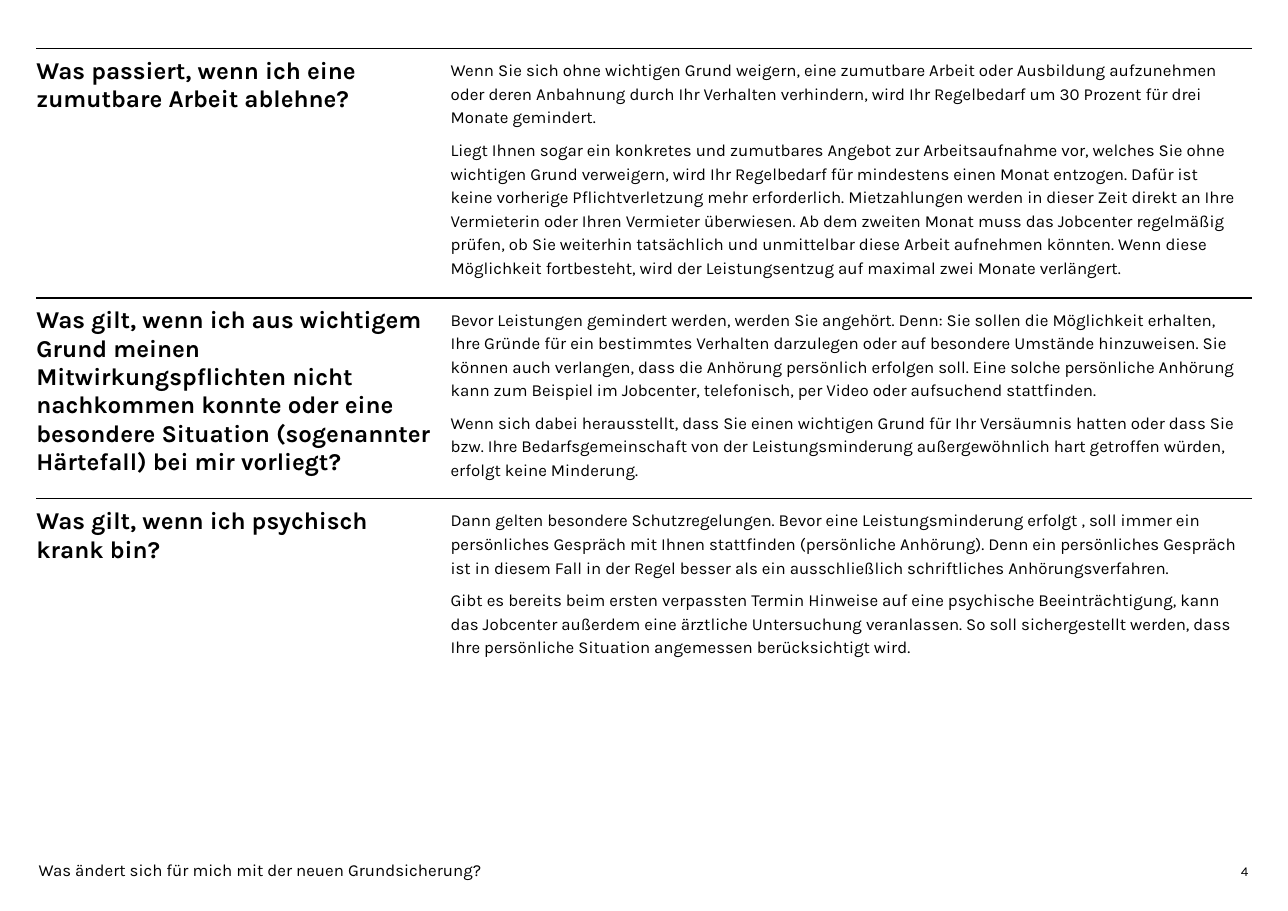
import pptx
import pptx.dml.color
import pptx.enum.text
import pptx.oxml
import pptx.oxml.ns
import pptx.util

Inches = pptx.util.Inches
Pt = pptx.util.Pt
ALIGN = pptx.enum.text.PP_ALIGN
BLACK = pptx.dml.color.RGBColor(0, 0, 0)

LEFT = dict(align=ALIGN.LEFT, size=11, bold=False)
RIGHT = dict(align=ALIGN.RIGHT, size=8.8, bold=False)
HEAD = dict(align=ALIGN.LEFT, size=15.8, bold=True)
BODY = dict(LEFT, line=1.2, after=6)

COLS = [3.76, 7.27]
ROWS = [
    (2.21, "Was passiert, wenn ich eine zumutbare Arbeit ablehne?", [
        "Wenn Sie sich ohne wichtigen Grund weigern, eine zumutbare Arbeit oder Ausbildung "
        "aufzunehmen oder deren Anbahnung durch Ihr Verhalten verhindern, wird Ihr Regelbedarf "
        "um 30 Prozent für drei Monate gemindert.",
        "Liegt Ihnen sogar ein konkretes und zumutbares Angebot zur Arbeitsaufnahme vor, welches "
        "Sie ohne wichtigen Grund verweigern, wird Ihr Regelbedarf für mindestens einen Monat "
        "entzogen. Dafür ist keine vorherige Pflichtverletzung mehr erforderlich. Mietzahlungen "
        "werden in dieser Zeit direkt an Ihre Vermieterin oder Ihren Vermieter überwiesen. Ab dem "
        "zweiten Monat muss das Jobcenter regelmäßig prüfen, ob Sie weiterhin tatsächlich und "
        "unmittelbar diese Arbeit aufnehmen könnten. Wenn diese Möglichkeit fortbesteht, wird der "
        "Leistungsentzug auf maximal zwei Monate verlängert.",
    ]),
    (1.77, "Was gilt, wenn ich aus wichtigem Grund meinen Mitwirkungspflichten nicht nachkommen "
     "konnte oder eine besondere Situation (sogenannter Härtefall) bei mir vorliegt?", [
        "Bevor Leistungen gemindert werden, werden Sie angehört. Denn: Sie sollen die Möglichkeit "
        "erhalten, Ihre Gründe für ein bestimmtes Verhalten darzulegen oder auf besondere Umstände "
        "hinzuweisen. Sie können auch verlangen, dass die Anhörung persönlich erfolgen soll. Eine "
        "solche persönliche Anhörung kann zum Beispiel im Jobcenter, telefonisch, per Video oder "
        "aufsuchend stattfinden.",
        "Wenn sich dabei herausstellt, dass Sie einen wichtigen Grund für Ihr Versäumnis hatten "
        "oder dass Sie bzw. Ihre Bedarfsgemeinschaft von der Leistungsminderung außergewöhnlich "
        "hart getroffen würden, erfolgt keine Minderung.",
    ]),
    (1.66, "Was gilt, wenn ich psychisch krank bin?", [
        "Dann gelten besondere Schutzregelungen. Bevor eine Leistungsminderung erfolgt , soll immer "
        "ein persönliches Gespräch mit Ihnen stattfinden (persönliche Anhörung). Denn ein "
        "persönliches Gespräch ist in diesem Fall in der Regel besser als ein ausschließlich "
        "schriftliches Anhörungsverfahren.",
        "Gibt es bereits beim ersten verpassten Termin Hinweise auf eine psychische "
        "Beeinträchtigung, kann das Jobcenter außerdem eine ärztliche Untersuchung veranlassen. So "
        "soll sichergestellt werden, dass Ihre persönliche Situation angemessen berücksichtigt wird.",
    ]),
]


class Page:
    def __init__(self, slide, font, color):
        self.slide = slide
        self.font = font
        self.color = color

    def fill(self, frame, texts, look):
        """Fill a text frame with one paragraph per text."""
        frame.word_wrap = True
        for i, text in enumerate(texts):
            para = frame.paragraphs[0] if i == 0 else frame.add_paragraph()
            run = para.add_run()
            run.text = text
            form = dict(alignment=look["align"], line_spacing=look.get("line", 1.0),
                        space_before=Pt(0), space_after=Pt(look.get("after", 0)))
            for name, value in form.items():
                setattr(para, name, value)
            form = dict(name=self.font, size=Pt(look["size"]), bold=look["bold"])
            for name, value in form.items():
                setattr(run.font, name, value)
            run.font.color.rgb = self.color

    def inset(self, owner, *sides):
        for name, value in zip(("left", "top", "right", "bottom"), sides):
            setattr(owner, "margin_" + name, Inches(value))

    def text(self, text, x, y, w, h, look):
        frame = self.slide.shapes.add_textbox(*map(Inches, (x, y, w, h))).text_frame
        self.inset(frame, 0, 0, 0, 0)
        frame.vertical_anchor = pptx.enum.text.MSO_ANCHOR.BOTTOM
        self.fill(frame, [text], look)

    def edge(self, cell, rules):
        """Draw 1 pt rules on the named sides (T, B) and clear the others."""
        props = cell._tc.get_or_add_tcPr()
        for side in "LRTB":
            paint = "<a:noFill/>"
            if side in rules:
                paint = f'<a:solidFill><a:srgbClr val="{self.color}"/></a:solidFill>'
            props.append(pptx.oxml.parse_xml(
                f'<a:ln{side} {pptx.oxml.ns.nsdecls("a")} w="{Pt(1)}">{paint}</a:ln{side}>'))
        cell.fill.background()

    def table(self, x, y, cols, rows):
        size = (x, y, sum(cols), sum(row[0] for row in rows))
        table = self.slide.shapes.add_table(len(rows), len(cols), *map(Inches, size)).table
        table.first_row = table.horz_banding = False
        for col, width in zip(table.columns, cols):
            col.width = Inches(width)
        for i, (high, head, body) in enumerate(rows):
            table.rows[i].height = Inches(high)
            rules = "T" if i == len(rows) - 1 else "TB"
            parts = [([head], HEAD, 0.08), (body, BODY, 0.12)]
            for j, (texts, look, low) in enumerate(parts):
                cell = table.cell(i, j)
                self.inset(cell, 0, 0.08, 0.1, low)
                self.edge(cell, rules)
                self.fill(cell.text_frame, texts, look)


def main():
    deck = pptx.Presentation()
    deck.slide_width, deck.slide_height = Inches(11.69), Inches(8.27)
    page = Page(deck.slides.add_slide(deck.slide_layouts[6]), "Karla", BLACK)
    page.text("Was ändert sich für mich mit der neuen Grundsicherung?",
              0.35, 7.76, 7.56, 0.23, LEFT)
    page.text("4", 9.78, 7.75, 1.55, 0.23, RIGHT)
    page.table(0.33, 0.44, COLS, ROWS)
    deck.save("out.pptx")


if __name__ == "__main__":
    main()
